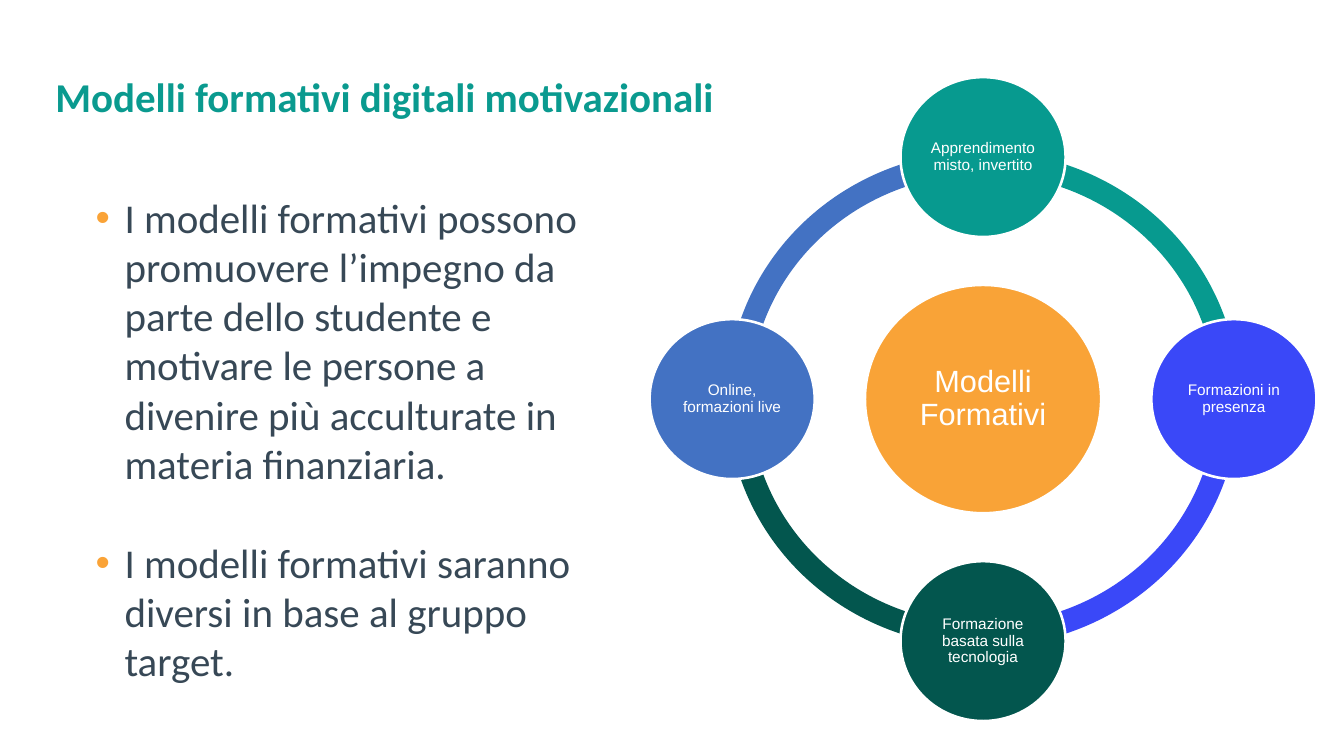
from math import cos, radians, sin

from lxml import etree
from pptx import Presentation
from pptx.dml.color import RGBColor
from pptx.enum.shapes import MSO_SHAPE
from pptx.enum.text import MSO_ANCHOR, PP_ALIGN
from pptx.oxml.ns import qn
from pptx.util import Pt

ELLIPSE = MSO_SHAPE.OVAL
BLOCK_ARC = MSO_SHAPE.BLOCK_ARC
TOP, MIDDLE = MSO_ANCHOR.TOP, MSO_ANCHOR.MIDDLE
LEFT, CENTER = PP_ALIGN.LEFT, PP_ALIGN.CENTER

TEAL, BLUE, GREEN, SKY = "079A8F", "3A48F8", "03564E", "4372C3"
ORANGE, WHITE = "F9A337", "FFFFFF"
CENTER_X, CENTER_Y = 768, 312
ORBIT_X, ORBIT_Y = 196, 189.2
ARC_W, ARC_H = 400, 387.5
TOPICS = [
    ("Apprendimento misto, invertito", TEAL),
    ("Formazioni in presenza", BLUE),
    ("Formazione basata sulla tecnologia", GREEN),
    ("Online, formazioni live", SKY),
]
POINTS = [
    "I modelli formativi possono promuovere l’impegno da parte dello studente "
    "e motivare le persone a divenire più acculturate in materia finanziaria.",
    "I modelli formativi saranno diversi in base al gruppo target.",
]


def rgb(value):
    return RGBColor.from_string(value)


def write(p, text, font="Arial", size=12, color=WHITE, bold=False,
          align=LEFT, spacing=None, before=0):
    p.alignment = align
    p.line_spacing = spacing
    p.space_before = Pt(before)
    r = p.add_run()
    r.text = text
    r.font.name = font
    r.font.size = Pt(size)
    r.font.bold = bold
    r.font.color.rgb = rgb(color)


def add_bullet(p, color, indent):
    pPr = p._p.get_or_add_pPr()
    pPr.set("marL", str(Pt(indent)))
    pPr.set("indent", str(-Pt(indent)))
    clr = etree.SubElement(pPr, qn("a:buClr"))
    etree.SubElement(clr, qn("a:srgbClr"), val=color)
    etree.SubElement(pPr, qn("a:buFont"), typeface="Arial")
    etree.SubElement(pPr, qn("a:buChar"), char="•")


class SlideBuilder:
    font = "Calibri"
    text_size = 32
    text_color = "374856"
    title_color = "0A9A8F"
    bullet_color = "FAA337"

    def __init__(self, prs):
        self.s = prs.slides.add_slide(prs.slide_layouts[6])

    def frame(self, sp, inset_x, inset_y, anchor):
        tf = sp.text_frame
        tf.word_wrap = True
        tf.vertical_anchor = anchor
        tf.margin_left = tf.margin_right = Pt(inset_x)
        tf.margin_top = tf.margin_bottom = Pt(inset_y)
        return tf

    def box(self, x, y, w, h, inset_x, anchor):
        sp = self.s.shapes.add_textbox(Pt(x), Pt(y), Pt(w), Pt(h))
        return self.frame(sp, inset_x, 3.6, anchor)

    def title(self, text, x, y, w, h):
        tf = self.box(x, y, w, h, 3.6, MIDDLE)
        write(tf.paragraphs[0], text, font=self.font, size=self.text_size,
              color=self.title_color, bold=True, spacing=0.9)

    def bullets(self, points, x, y, w, h):
        tf = self.box(x, y, w, h, 7.2, TOP)
        for i, text in enumerate(points):
            p = tf.paragraphs[0] if i == 0 else tf.add_paragraph()
            write(p, text, font=self.font, size=self.text_size,
                  color=self.text_color, before=39 if i else 0)
            add_bullet(p, self.bullet_color, 22.5)

    def shape(self, kind, cx, cy, w, h, fill):
        sp = self.s.shapes.add_shape(
            kind, Pt(cx - w / 2), Pt(cy - h / 2), Pt(w), Pt(h))
        sp.shadow.inherit = False
        sp.fill.solid()
        sp.fill.fore_color.rgb = rgb(fill)
        sp.line.fill.background()
        return sp

    def arc(self, start, fill):
        sp = self.shape(BLOCK_ARC, CENTER_X, CENTER_Y, ARC_W, ARC_H, fill)
        sp.adjustments[0] = start % 360 * 0.6
        sp.adjustments[1] = (start + 90) % 360 * 0.6
        sp.adjustments[2] = 0.046

    def circle(self, text, cx, cy, w, h, fill, size=12, inset=1.5):
        sp = self.shape(ELLIPSE, cx, cy, w, h, fill)
        sp.line.color.rgb = rgb(WHITE)
        sp.line.width = Pt(2)
        tf = self.frame(sp, inset, inset, MIDDLE)
        write(tf.paragraphs[0], text, size=size, align=CENTER, spacing=0.9)


def main():
    prs = Presentation()
    prs.slide_width, prs.slide_height = Pt(1050), Pt(591)
    slide = SlideBuilder(prs)
    slide.title("Modelli formativi digitali motivazionali", 39.6, 49, 970, 57)
    slide.bullets(POINTS, 67.7, 147, 430.5, 440)

    angles = [270 + 90 * i for i in range(len(TOPICS))]
    for angle, (_, color) in zip(angles, TOPICS):
        slide.arc(angle, color)
    slide.circle("Modelli Formativi", CENTER_X, CENTER_Y, 184.5, 178.5,
                 ORANGE, size=24, inset=2.4)
    for angle, (text, color) in zip(angles, TOPICS):
        cx = CENTER_X + ORBIT_X * cos(radians(angle))
        cy = CENTER_Y + ORBIT_Y * sin(radians(angle))
        slide.circle(text, cx, cy, 129, 125, color)
    prs.save("out.pptx")


if __name__ == "__main__":
    main()
